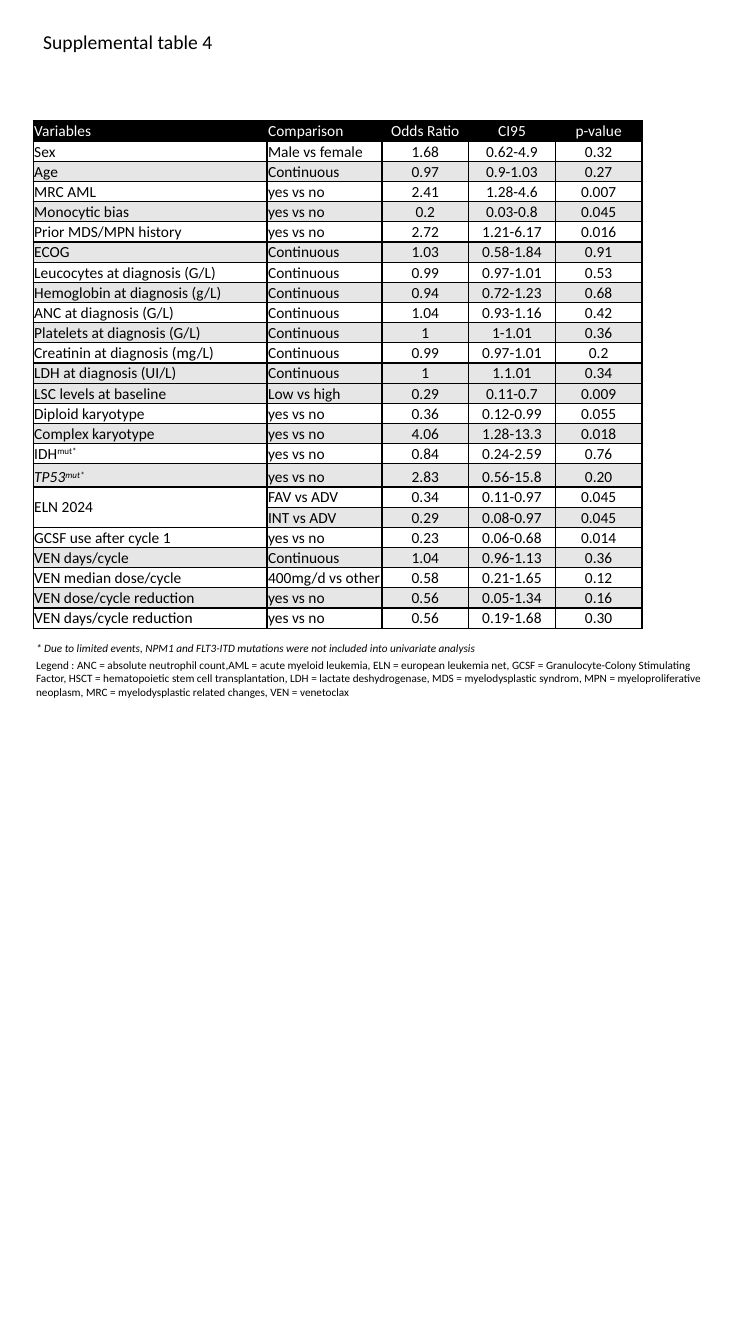
from dataclasses import dataclass

from lxml import etree
from pptx import Presentation
from pptx.dml.color import RGBColor
from pptx.enum.text import MSO_ANCHOR, MSO_AUTO_SIZE, PP_ALIGN
from pptx.oxml.ns import qn
from pptx.util import Emu, Pt

BOTTOM, MIDDLE = MSO_ANCHOR.BOTTOM, MSO_ANCHOR.MIDDLE
LEFT, CENTER = PP_ALIGN.LEFT, PP_ALIGN.CENTER
FIT_SHAPE = MSO_AUTO_SIZE.SHAPE_TO_FIT_TEXT

PX = 9144
FONT = "Calibri"
BLACK, WHITE, GRAY = "000000", "FFFFFF", "E7E6E6"
COLUMN_WIDTHS = (232, 114, 86, 86, 86)
ROW_HEIGHT, TALL_ROW_HEIGHT = 20, 23
BAND_SHIFT_ROW = 13
HEADER = ("Variables", "Comparison", "Odds Ratio", "CI95", "p-value")


@dataclass
class Variable:
    name: str
    comparison: str
    odds_ratio: str
    ci95: str
    p_value: str
    superscript: str = ""
    italic: bool = False
    height: int = ROW_HEIGHT
    name_rows: int = 1

    def values(self) -> tuple[str, ...]:
        return self.name, self.comparison, self.odds_ratio, self.ci95, self.p_value


@dataclass
class Note:
    text: str
    left: int
    top: int
    width: int
    height: int
    size: int
    italic: bool = False
    wrap: bool = False


VARIABLES = [
    Variable("Sex", "Male vs female", "1.68", "0.62-4.9", "0.32"),
    Variable("Age", "Continuous", "0.97", "0.9-1.03", "0.27"),
    Variable("MRC AML", "yes vs no", "2.41", "1.28-4.6", "0.007"),
    Variable("Monocytic bias", "yes vs no", "0.2", "0.03-0.8", "0.045"),
    Variable("Prior MDS/MPN history", "yes vs no", "2.72", "1.21-6.17", "0.016"),
    Variable("ECOG", "Continuous", "1.03", "0.58-1.84", "0.91"),
    Variable("Leucocytes at diagnosis (G/L)", "Continuous", "0.99", "0.97-1.01", "0.53"),
    Variable("Hemoglobin at diagnosis (g/L)", "Continuous", "0.94", "0.72-1.23", "0.68"),
    Variable("ANC at diagnosis (G/L)", "Continuous", "1.04", "0.93-1.16", "0.42"),
    Variable("Platelets at diagnosis (G/L)", "Continuous", "1", "1-1.01", "0.36"),
    Variable("Creatinin at diagnosis (mg/L)", "Continuous", "0.99", "0.97-1.01", "0.2"),
    Variable("LDH at diagnosis (UI/L)", "Continuous", "1", "1.1.01", "0.34"),
    Variable("LSC levels at baseline", "Low vs high", "0.29", "0.11-0.7", "0.009"),
    Variable("Diploid karyotype", "yes vs no", "0.36", "0.12-0.99", "0.055"),
    Variable("Complex karyotype", "yes vs no", "4.06", "1.28-13.3", "0.018"),
    Variable("IDH", "yes vs no", "0.84", "0.24-2.59", "0.76", superscript="mut*"),
    Variable("TP53", "yes vs no", "2.83", "0.56-15.8", "0.20", superscript="mut*",
             italic=True, height=TALL_ROW_HEIGHT),
    Variable("ELN 2024", "FAV vs ADV", "0.34", "0.11-0.97", "0.045", name_rows=2),
    Variable("", "INT vs ADV", "0.29", "0.08-0.97", "0.045"),
    Variable("GCSF use after cycle 1", "yes vs no", "0.23", "0.06-0.68", "0.014"),
    Variable("VEN days/cycle", "Continuous", "1.04", "0.96-1.13", "0.36"),
    Variable("VEN median dose/cycle", "400mg/d vs other", "0.58", "0.21-1.65", "0.12"),
    Variable("VEN dose/cycle reduction", "yes vs no", "0.56", "0.05-1.34", "0.16"),
    Variable("VEN days/cycle reduction", "yes vs no", "0.56", "0.19-1.68", "0.30"),
]

NOTES = [
    Note("* Due to limited events, NPM1 and FLT3-ITD mutations were not included into "
         "univariate analysis", 26, 631, 458, 24, 8, italic=True),
    Note("Supplemental table 4", 33, 25, 200, 34, 14),
    Note("Legend : ANC = absolute neutrophil count,AML = acute myeloid leukemia, "
         "ELN = european leukemia net, GCSF = Granulocyte-Colony Stimulating Factor, "
         "HSCT = hematopoietic stem cell transplantation, LDH = lactate deshydrogenase, "
         "MDS = myelodysplastic syndrom, MPN = myeloproliferative neoplasm, "
         "MRC = myelodysplastic related changes, VEN = venetoclax",
         26, 648, 683, 50, 8, wrap=True),
]


def px(n: int) -> Emu:
    return Emu(n * PX)


def rgb(color: str) -> RGBColor:
    return RGBColor.from_string(color)


def add_run(p, text: str, size: int, color: str = BLACK, italic: bool = False,
            superscript: bool = False) -> None:
    r = p.add_run()
    r.text = text
    r.font.name = FONT
    r.font.size = Pt(size)
    r.font.italic = italic
    r.font.color.rgb = rgb(color)
    if superscript:
        r._r.get_or_add_rPr().set("baseline", "30000")


def add_borders(cell) -> None:
    tc_pr = cell._tc.get_or_add_tcPr()
    for i, side in enumerate(("a:lnL", "a:lnR", "a:lnT", "a:lnB")):
        ln = etree.Element(qn(side), w=str(Pt(1)))
        fill = etree.SubElement(ln, qn("a:solidFill"))
        etree.SubElement(fill, qn("a:srgbClr"), val=BLACK)
        tc_pr.insert(i, ln)


def row_fill(row: int) -> str:
    if row == 0:
        return BLACK
    shaded = (row % 2 == 0) == (row < BAND_SHIFT_ROW)
    return GRAY if shaded else WHITE


def style_cell(cell, row: int, column: int):
    cell.margin_left = cell.margin_right = cell.margin_top = px(1)
    cell.margin_bottom = 0
    cell.vertical_anchor = BOTTOM
    cell.fill.solid()
    cell.fill.fore_color.rgb = rgb(row_fill(row))
    add_borders(cell)
    p = cell.text_frame.paragraphs[0]
    p.alignment = CENTER if column > 1 else LEFT
    p.font.size = Pt(11)
    return p


def add_odds_table(slide) -> None:
    heights = [ROW_HEIGHT] + [v.height for v in VARIABLES]
    table = slide.shapes.add_table(
        len(heights), len(COLUMN_WIDTHS), px(33), px(120),
        px(sum(COLUMN_WIDTHS)), px(sum(heights))).table
    table.first_row = table.horz_banding = False
    for column, width in zip(table.columns, COLUMN_WIDTHS):
        column.width = px(width)
    for row, height in zip(table.rows, heights):
        row.height = px(height)
    for j, heading in enumerate(HEADER):
        add_run(style_cell(table.cell(0, j), 0, j), heading, 11, WHITE)
    for i, v in enumerate(VARIABLES, 1):
        for j, text in enumerate(v.values()):
            p = style_cell(table.cell(i, j), i, j)
            if text:
                add_run(p, text, 11, italic=v.italic and j == 0)
            if v.superscript and j == 0:
                add_run(p, v.superscript, 11, italic=v.italic, superscript=True)
    for i, v in enumerate(VARIABLES, 1):
        if v.name_rows > 1:
            table.cell(i, 0).merge(table.cell(i + v.name_rows - 1, 0))
            table.cell(i, 0).vertical_anchor = MIDDLE


def add_note(slide, note: Note) -> None:
    sp = slide.shapes.add_textbox(px(note.left), px(note.top), px(note.width), px(note.height))
    tf = sp.text_frame
    tf.word_wrap = note.wrap
    tf.auto_size = FIT_SHAPE
    add_run(tf.paragraphs[0], note.text, note.size, italic=note.italic)


def main() -> None:
    prs = Presentation()
    prs.slide_width, prs.slide_height = px(750), px(1333)
    slide = prs.slides.add_slide(prs.slide_layouts[6])
    add_odds_table(slide)
    for note in NOTES:
        add_note(slide, note)
    prs.save("out.pptx")


if __name__ == "__main__":
    main()
